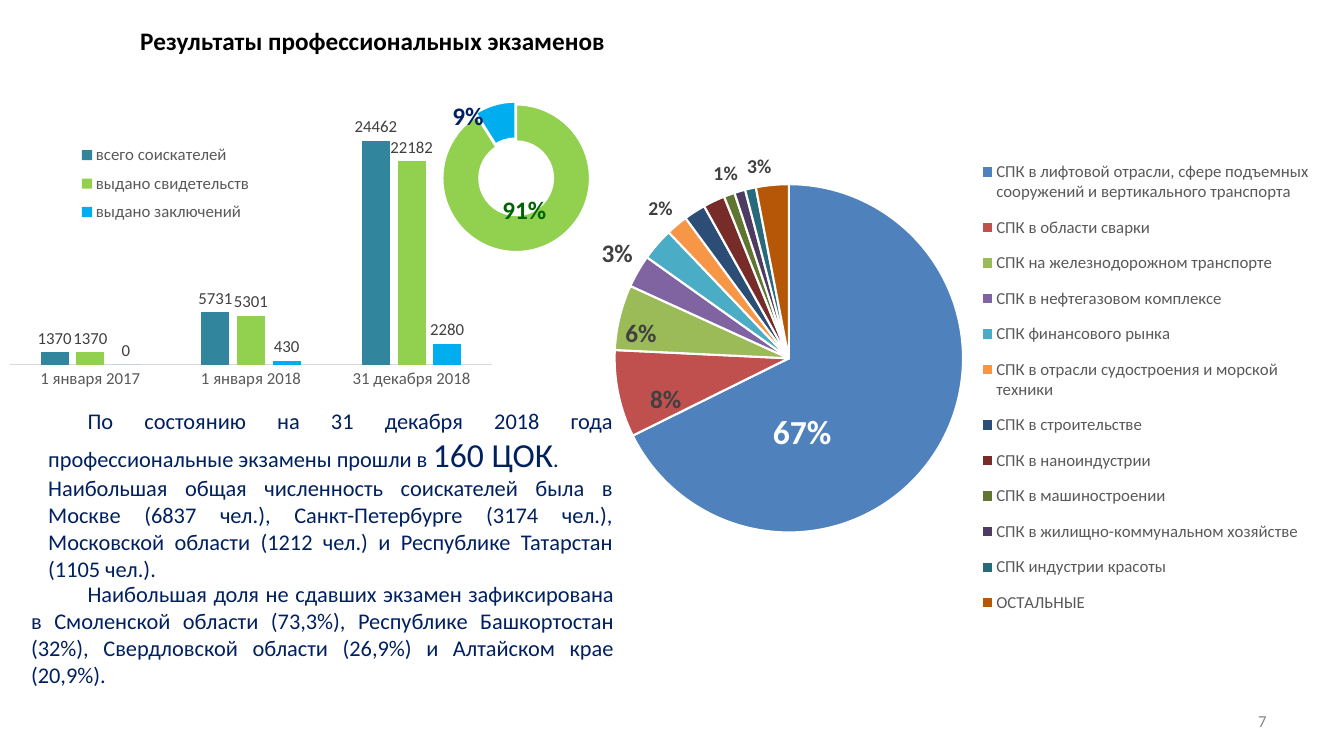
from dataclasses import dataclass

from lxml.etree import SubElement
from pptx import Presentation
from pptx.chart.data import CategoryChartData
from pptx.dml.color import RGBColor
from pptx.enum.chart import XL_CHART_TYPE as Kind
from pptx.enum.chart import XL_LABEL_POSITION as LabelPos
from pptx.enum.chart import XL_LEGEND_POSITION as LegendPos
from pptx.enum.chart import XL_TICK_MARK as Tick
from pptx.enum.text import MSO_ANCHOR as Anchor
from pptx.enum.text import MSO_AUTO_SIZE as AutoSize
from pptx.enum.text import PP_ALIGN as Align
from pptx.oxml.ns import qn
from pptx.util import Pt

PX = 9144


@dataclass(frozen=True)
class Theme:
    font: str = "Calibri"
    black: str = "000000"
    white: str = "FFFFFF"
    navy: str = "002060"
    dark_green: str = "006400"
    label: str = "404040"
    muted: str = "595959"
    axis: str = "D9D9D9"
    page: str = "898989"
    teal: str = "31859C"
    green: str = "92D050"
    blue: str = "00AEEF"
    small: int = 12
    minor: int = 14
    body: int = 16
    heading: int = 18
    large: int = 24


THEME = Theme()

EXAMS = [
    ("всего соискателей", (1370, 5731, 24462), THEME.teal),
    ("выдано свидетельств", (1370, 5301, 22182), THEME.green),
    ("выдано заключений", (0, 430, 2280), THEME.blue),
]
COUNCILS = [
    ("СПК в лифтовой отрасли, сфере подъемных сооружений и вертикального транспорта", 67, "4F81BD"),
    ("СПК в области сварки", 8, "C0504D"),
    ("СПК на железнодорожном транспорте", 6, "9BBB59"),
    ("СПК в нефтегазовом комплексе", 3, "8064A2"),
    ("СПК финансового рынка", 3, "4BACC6"),
    ("СПК в отрасли судостроения и морской техники", 2, "F79646"),
    ("СПК в строительстве", 2, "2C4D75"),
    ("СПК в наноиндустрии", 2, "772C2A"),
    ("СПК в машиностроении", 1, "5F7530"),
    ("СПК в жилищно-коммунальном хозяйстве", 1, "4D3B62"),
    ("СПК индустрии красоты", 1, "276A7C"),
    ("ОСТАЛЬНЫЕ", 3, "B65708"),
]
COUNCIL_LABELS = [
    (0, THEME.large, THEME.white, LabelPos.CENTER, (-0.08, 0.05)),
    (1, THEME.heading, THEME.label, LabelPos.CENTER, (-0.05, 0.04)),
    (2, THEME.heading, THEME.label, LabelPos.INSIDE_END, None),
    (3, THEME.heading, THEME.label, LabelPos.OUTSIDE_END, None),
    (5, THEME.minor, THEME.label, LabelPos.OUTSIDE_END, None),
    (9, THEME.minor, THEME.label, LabelPos.OUTSIDE_END, None),
    (11, THEME.minor, THEME.label, LabelPos.OUTSIDE_END, None),
]
OUTCOMES = [("1", 91, THEME.green), ("2", 9, THEME.blue)]
OUTCOME_LABELS = [
    (0, THEME.heading, THEME.dark_green, None, (-0.03, -0.1)),
    (1, THEME.heading, THEME.navy, None, (-0.13, -0.03)),
]


def emu(box):
    return [length * PX for length in box]


def style(font, size, color, bold=False):
    font.name, font.size, font.bold = THEME.font, Pt(size), bold
    font.color.rgb = RGBColor.from_string(color)


def paint(fill, color):
    fill.solid()
    fill.fore_color.rgb = RGBColor.from_string(color)


def add_run(paragraph, text, size, color, bold=False):
    run = paragraph.add_run()
    run.text = text
    style(run.font, size, color, bold)


def set_layout(parent, index, **places):
    for old in parent.findall(qn("c:layout")):
        parent.remove(old)
    layout = SubElement(parent, qn("c:layout"))
    manual = SubElement(layout, qn("c:manualLayout"))
    for name, value in places.items():
        SubElement(manual, qn(f"c:{name}")).set("val", str(value))
    parent.insert(index, layout)


def place_plot(chart, x, y, w, h):
    area = chart.plots[0]._element.getparent()
    set_layout(area, 0, layoutTarget="inner", xMode="edge", yMode="edge", x=x, y=y, w=w, h=h)


def place_legend(chart, position, x, y, w, h):
    chart.has_legend = True
    legend = chart.legend
    legend.position = position
    legend.include_in_layout = False
    style(legend.font, THEME.small, THEME.muted)
    set_layout(legend._element, 1, xMode="edge", yMode="edge", x=x, y=y, w=w, h=h)


def add_chart(slide, box, kind, categories, series):
    data = CategoryChartData(number_format="0")
    data.categories = categories
    for name, values in series:
        data.add_series(name, values)
    chart = slide.shapes.add_chart(kind, *emu(box), data).chart
    chart.has_title = chart.has_legend = False
    style(chart.font, 10, THEME.black)
    return chart


def add_shares(slide, box, kind, shares, labels):
    names, values, colors = zip(*shares)
    chart = add_chart(slide, box, kind, names, [("Series 1", values)])
    chart.plots[0].vary_by_categories = False
    series = chart.plots[0].series[0]
    series.data_labels.show_value = False
    for index, color in enumerate(colors):
        look = series.points[index].format
        paint(look.fill, color)
        paint(look.line.fill, THEME.white)
        look.line.width = Pt(1.5)
    for index, size, color, position, shift in labels:
        label = series.points[index].data_label
        style(label.font, size, color, True)
        if position is not None:
            label.position = position
        element = series._element.xpath(f'c:dLbls/c:dLbl[c:idx/@val="{index}"]')[0]
        percent = SubElement(element, qn("c:numFmt"))
        percent.set("formatCode", '0"%"')
        percent.set("sourceLinked", "0")
        element.insert(1, percent)
        if shift:
            set_layout(element, 1, x=shift[0], y=shift[1])
    for leader in series._element.xpath("c:dLbls/c:showLeaderLines"):
        leader.set("val", "0")
    return chart


def exam_columns(slide, box):
    dates = ["1 января 2017", "1 января 2018", "31 декабря 2018"]
    chart = add_chart(slide, box, Kind.COLUMN_CLUSTERED, dates, [row[:2] for row in EXAMS])
    place_plot(chart, 0.02, 0.02, 0.96, 0.88)
    place_legend(chart, LegendPos.LEFT, 0.14, 0.17, 0.38, 0.3)
    plot = chart.plots[0]
    plot.gap_width, plot.overlap, plot.vary_by_categories = 219, -27, False
    for series, (_, _, color) in zip(plot.series, EXAMS):
        paint(series.format.fill, color)
        labels = series.data_labels
        labels.show_value, labels.position = True, LabelPos.OUTSIDE_END
        style(labels.font, THEME.small, THEME.label)
    dates_axis, count_axis = chart.category_axis, chart.value_axis
    dates_axis.major_tick_mark = Tick.NONE
    style(dates_axis.tick_labels.font, THEME.small, THEME.muted)
    paint(dates_axis.format.line.fill, THEME.axis)
    dates_axis.format.line.width = Pt(0.75)
    count_axis.minimum_scale, count_axis.maximum_scale = 0, 30000
    count_axis.has_major_gridlines = count_axis.visible = False


def outcome_ring(slide, box):
    chart = add_shares(slide, box, Kind.DOUGHNUT_EXPLODED, OUTCOMES, OUTCOME_LABELS)
    place_plot(chart, 0.2, 0.1, 0.6, 0.73)
    series = chart.plots[0].series[0]._element
    for explosion in series.xpath("c:explosion"):
        series.remove(explosion)
    blue_point = series.xpath('c:dPt[c:idx/@val="1"]')[0]
    explosion = SubElement(blue_point, qn("c:explosion"))
    explosion.set("val", "8")
    blue_point.find(qn("c:spPr")).addprevious(explosion)


def council_pie(slide, box):
    chart = add_shares(slide, box, Kind.PIE, COUNCILS, COUNCIL_LABELS)
    place_plot(chart, 0.06, 0.135, 0.46, 0.6)
    place_legend(chart, LegendPos.RIGHT, 0.53, 0.07, 0.46, 0.83)


def text_box(slide, box, paragraphs, align=Align.JUSTIFY, anchor=Anchor.TOP):
    frame = slide.shapes.add_textbox(*emu(box)).text_frame
    frame.word_wrap, frame.vertical_anchor = True, anchor
    for index, (indent, runs) in enumerate(paragraphs):
        paragraph = frame.add_paragraph() if index else frame.paragraphs[0]
        paragraph.alignment = align
        paragraph._p.get_or_add_pPr().set("indent", str(indent * PX))
        for text, size, color in runs:
            add_run(paragraph, text, size, color)


def heading(slide, box, text):
    title = slide.shapes.title
    title.left, title.top, title.width, title.height = emu(box)
    frame = title.text_frame
    frame.auto_size, frame.vertical_anchor = AutoSize.NONE, Anchor.MIDDLE
    frame.paragraphs[0].alignment = Align.LEFT
    add_run(frame.paragraphs[0], text, THEME.heading, THEME.black, True)


def main():
    deck = Presentation()
    deck.slide_width, deck.slide_height = emu((1333, 750))
    slide = deck.slides.add_slide(deck.slide_layouts[5])
    heading(slide, (129, 20, 830, 40), "Результаты профессиональных экзаменов")
    exam_columns(slide, (0, 83, 498, 310))
    text_box(slide, (38, 399, 580, 158), [
        (39, [("По состоянию на 31 декабря 2018 года профессиональные экзамены прошли в ", THEME.body, THEME.navy),
              ("160 ЦОК", THEME.large, THEME.navy), (".", THEME.body, THEME.navy)]),
        (0, [("Наибольшая общая численность соискателей была в Москве (6837 чел.), Санкт-Петербурге (3174 чел.), "
              "Московской области (1212 чел.) и Республике Татарстан (1105 чел.).", THEME.body, THEME.navy)]),
    ])
    outcome_ring(slide, (390, 83, 244, 202))
    text_box(slide, (21, 571, 598, 91), [
        (56, [("Наибольшая доля не сдавших экзамен зафиксирована в Смоленской области (73,3%), Республике "
               "Башкортостан (32%), Свердловской области (26,9%) и Алтайском крае (20,9%).", THEME.body, THEME.navy)]),
    ])
    council_pie(slide, (564, 105, 753, 576))
    text_box(slide, (955, 695, 311, 40), [(0, [("7", THEME.small, THEME.page)])], Align.RIGHT, Anchor.MIDDLE)
    deck.save("out.pptx")


if __name__ == "__main__":
    main()
